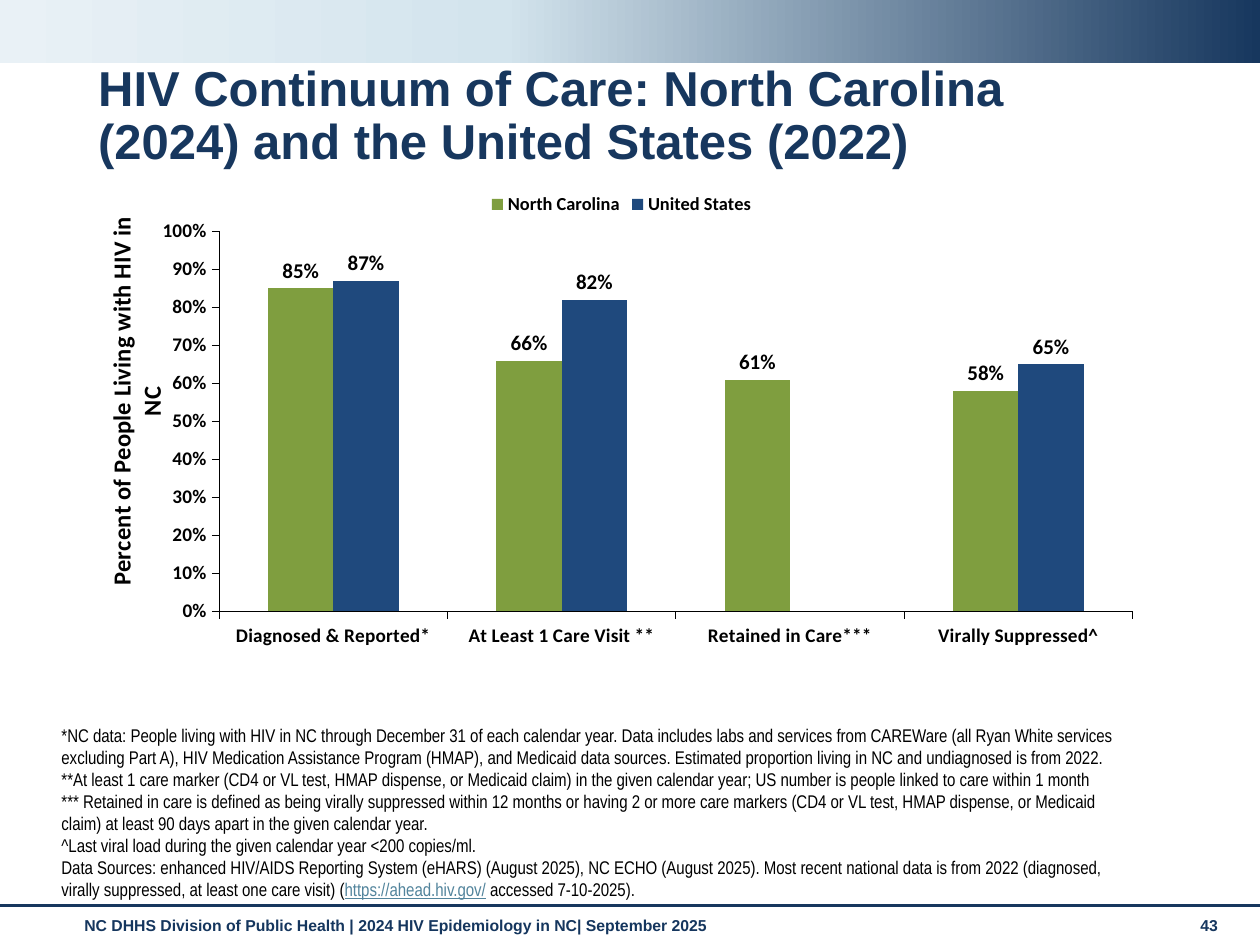
import copy

import pptx
import pptx.chart.data
import pptx.dml.color
import pptx.enum.chart
import pptx.enum.shapes
import pptx.enum.text
import pptx.oxml
import pptx.oxml.ns
import pptx.util
from pptx.util import Cm, Pt

RGBColor = pptx.dml.color.RGBColor
NAVY = RGBColor(0x17, 0x37, 0x5E)
FOOTER_NAVY = RGBColor(0x15, 0x36, 0x5E)
PALE_BLUE = RGBColor(0xD3, 0xE4, 0xED)
ICE = RGBColor(0xE9, 0xF1, 0xF6)
BLACK = RGBColor(0, 0, 0)
LINK_BLUE = RGBColor(0x52, 0x84, 0x9C)
GREEN = RGBColor(0x7F, 0x9E, 0x3F)
BLUE = RGBColor(0x1F, 0x49, 0x7D)

FOOTNOTES = [
    ["*NC data: People living with HIV in NC through December 31 of each calendar year. "
     "Data includes labs and services from CAREWare (all Ryan White services excluding Part A), "
     "HIV Medication Assistance Program (HMAP), and Medicaid data sources. "
     "Estimated proportion living in NC and undiagnosed is from 2022."],
    ["**At least 1 care marker (CD4 or VL test, HMAP dispense, or Medicaid claim) in the given "
     "calendar year; US number is people linked to care within 1 month"],
    ["*** Retained in care is defined as being virally suppressed within 12 months or having 2 or "
     "more care markers (CD4 or VL test, HMAP dispense, or Medicaid claim) at least 90 days apart "
     "in the given calendar year."],
    ["^Last viral load during the given calendar year <200 copies/ml."],
    ["Data Sources: enhanced HIV/AIDS Reporting System (eHARS) (August 2025), NC ECHO (August "
     "2025). Most recent national data is from 2022 (diagnosed, virally suppressed, at least one "
     "care visit) (",
     "https://ahead.hiv.gov/",
     " accessed 7-10-2025)."],
]
CATEGORIES = ["Diagnosed & Reported*", "At Least 1 Care Visit **",
              "Retained in Care***", "Virally Suppressed^"]
SERIES = [("North Carolina", (0.85, 0.66, 0.61, 0.58), GREEN),
          ("United States", (0.87, 0.82, None, 0.65), BLUE)]


def set_font(font, size, name, color, bold=True):
    font.size = Pt(size)
    font.name = name
    font.bold = bold
    font.color.rgb = color


def set_layout(parent, index, **fractions):
    """Give a chart part a manual position, as fractions of the chart."""
    for old_layout in parent.findall(pptx.oxml.ns.qn("c:layout")):
        parent.remove(old_layout)
    target = '<c:layoutTarget val="inner"/>' if "w" in fractions else ""
    modes = "".join(f'<c:{key}Mode val="edge"/>' for key in "xy")
    sizes = "".join(f'<c:{key} val="{value}"/>' for key, value in fractions.items())
    parent.insert(index, pptx.oxml.parse_xml(
        f'<c:layout {pptx.oxml.ns.nsdecls("c")}><c:manualLayout>'
        f'{target}{modes}{sizes}</c:manualLayout></c:layout>'))


class SlideBuilder:
    heading_font = "Arial"
    note_font = "Arial Narrow"
    chart_font = "Calibri"

    def __init__(self, presentation):
        self.slide = presentation.slides.add_slide(presentation.slide_layouts[6])

    def band(self, left, top, width, height, stops):
        """Add a rectangle with a gradient running from right to left."""
        shape = self.slide.shapes.add_shape(
            pptx.enum.shapes.MSO_SHAPE.RECTANGLE, Cm(left), Cm(top), Cm(width), Cm(height))
        shape.shadow.inherit = False
        shape.line.fill.background()
        shape.fill.gradient()
        shape.fill.gradient_angle = 180
        stop_list = shape._element.spPr.find(".//" + pptx.oxml.ns.qn("a:gsLst"))
        while len(stop_list) < len(stops):
            stop_list.append(copy.deepcopy(stop_list[-1]))
        for stop, (position, color) in zip(shape.fill.gradient_stops, stops):
            stop.position = position
            stop.color.rgb = color

    def rule(self, left, top, right, color, weight):
        connector = self.slide.shapes.add_connector(
            pptx.enum.shapes.MSO_CONNECTOR.STRAIGHT, Cm(left), Cm(top), Cm(right), Cm(top))
        connector.line.color.rgb = color
        connector.line.width = Pt(weight)
        connector._element.spPr.append(
            pptx.oxml.parse_xml(f'<a:effectLst {pptx.oxml.ns.nsdecls("a")}/>'))

    def text(self, left, top, width, height, paragraphs, size, color, font=heading_font,
             bold=True, spacing=None, anchor=pptx.enum.text.MSO_ANCHOR.TOP):
        """Add a text box; each paragraph is a list of runs, and web addresses are underlined."""
        frame = self.slide.shapes.add_textbox(
            Cm(left), Cm(top), Cm(width), Cm(height)).text_frame
        frame.word_wrap = True
        frame.vertical_anchor = anchor
        for index, runs in enumerate(paragraphs):
            paragraph = frame.add_paragraph() if index else frame.paragraphs[0]
            if spacing:
                paragraph.line_spacing = spacing
            for words in runs:
                run = paragraph.add_run()
                run.text = words
                is_address = words.startswith("https://")
                set_font(run.font, size, font, LINK_BLUE if is_address else color, bold)
                if is_address:
                    run.font.underline = True

    def column_chart(self, left, top, width, height, categories, series_rows, axis_title):
        data = pptx.chart.data.CategoryChartData(number_format="0%")
        data.categories = categories
        for name, values, _ in series_rows:
            data.add_series(name, values)
        chart = self.slide.shapes.add_chart(
            pptx.enum.chart.XL_CHART_TYPE.COLUMN_CLUSTERED,
            Cm(left), Cm(top), Cm(width), Cm(height), data).chart
        set_font(chart.font, 10, self.chart_font, BLACK, False)
        chart.has_title = False
        chart.has_legend = True
        chart.legend.position = pptx.enum.chart.XL_LEGEND_POSITION.TOP
        chart.legend.include_in_layout = False
        set_font(chart.legend.font, 10.5, self.chart_font, BLACK)

        plot = chart.plots[0]
        plot.gap_width = 150
        plot.overlap = 0
        plot.vary_by_categories = False
        for series, (_, _, color) in zip(plot.series, series_rows):
            series.format.fill.solid()
            series.format.fill.fore_color.rgb = color
            series.invert_if_negative = False
            labels = series.data_labels
            labels.show_value = True
            labels.position = pptx.enum.chart.XL_LABEL_POSITION.OUTSIDE_END
            labels.number_format = "0%"
            labels.number_format_is_linked = False
            set_font(labels.font, 12, self.chart_font, BLACK)

        for axis in (chart.category_axis, chart.value_axis):
            axis.has_major_gridlines = False
            axis.major_tick_mark = pptx.enum.chart.XL_TICK_MARK.OUTSIDE
            axis.minor_tick_mark = pptx.enum.chart.XL_TICK_MARK.NONE
            axis.format.line.color.rgb = BLACK
            axis.format.line.width = Pt(0.5)
            set_font(axis.tick_labels.font, 11, self.chart_font, BLACK)
        value_axis = chart.value_axis
        value_axis.minimum_scale, value_axis.maximum_scale = 0, 1
        value_axis.major_unit = 0.1
        value_axis.tick_labels.number_format = "0%"
        value_axis.tick_labels.number_format_is_linked = False
        run = value_axis.axis_title.text_frame.paragraphs[0].add_run()
        run.text = axis_title
        set_font(run.font, 14, self.chart_font, BLACK)

        set_layout(value_axis.axis_title._element, 1, x=0.02, y=0.07)
        set_layout(chart._chartSpace.chart.plotArea, 0, x=0.13, y=0.11, w=0.84, h=0.8)


def main():
    presentation = pptx.Presentation()
    presentation.slide_width = Cm(25.4)
    presentation.slide_height = Cm(19.05)
    builder = SlideBuilder(presentation)

    builder.band(0, 0, 25.4, 1.27, [(0, NAVY), (0.6, PALE_BLUE), (1, ICE)])
    builder.rule(0, 18.26, 25.4, NAVY, 1.75)
    builder.text(1.45, 18.34, 22.2, 0.74, [[
        "NC DHHS Division of Public Health | 2024 HIV Epidemiology in NC| September 2025"]],
        9, FOOTER_NAVY)
    builder.text(23.95, 18.34, 1.12, 0.74, [["43"]], 9, FOOTER_NAVY)
    builder.text(1.73, 1.17, 21.8, 1.52, [[
        "HIV Continuum of Care: North Carolina (2024) and the United States (2022)"]],
        28, NAVY, spacing=0.9)
    builder.column_chart(1.57, 3.61, 21.92, 9.58, CATEGORIES, SERIES,
                         "Percent of People Living with HIV in NC")
    builder.text(0.99, 17.37, 22.2, 0.91, FOOTNOTES, 10.5, BLACK, builder.note_font,
                 bold=False, anchor=pptx.enum.text.MSO_ANCHOR.BOTTOM)
    presentation.save("out.pptx")


if __name__ == "__main__":
    main()
